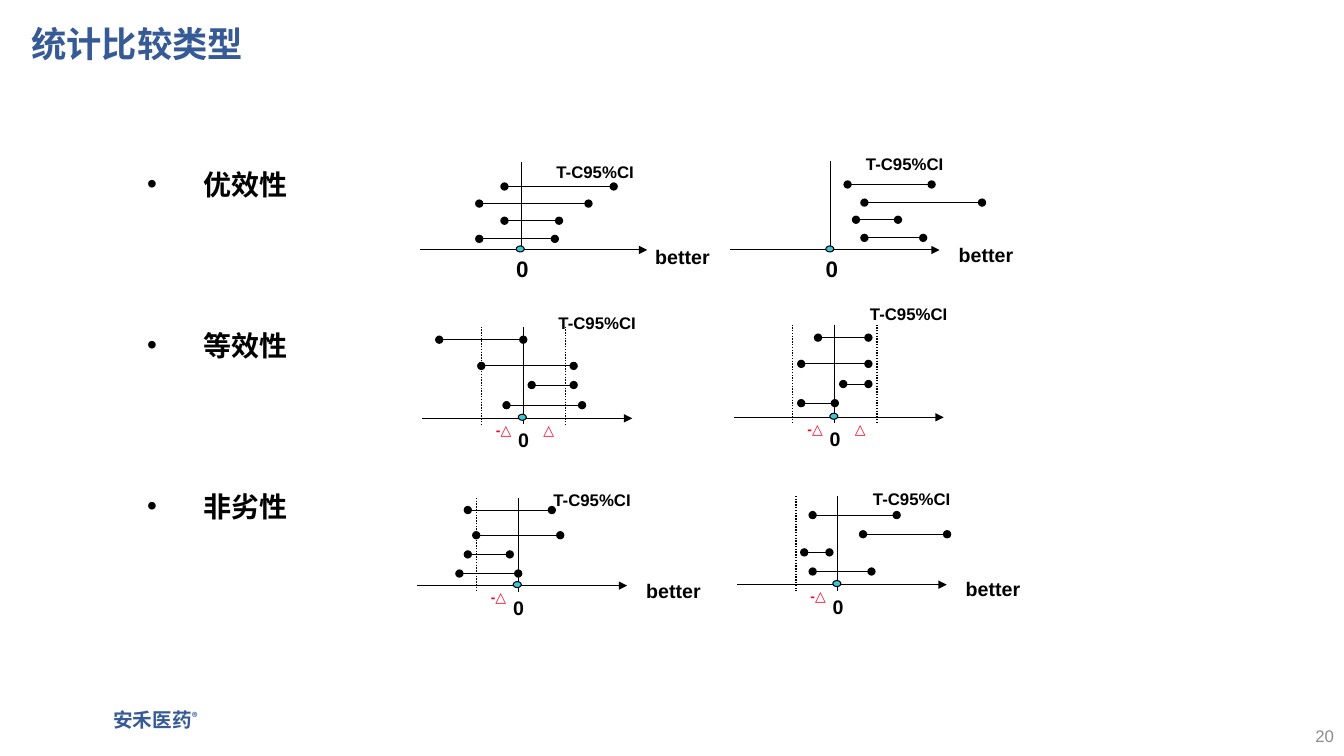
"""Build a slide of confidence interval sketches for three types of statistical comparison."""
import pptx
import pptx.dml.color
import pptx.enum.dml
import pptx.enum.shapes
import pptx.enum.text
import pptx.oxml.ns
import pptx.util
from lxml import etree

Inches, Pt = pptx.util.Inches, pptx.util.Pt
ALIGN = pptx.enum.text.PP_ALIGN
ANCHOR = pptx.enum.text.MSO_ANCHOR

TITLE = "统计比较类型"
COMPARISONS = ["优效性", "等效性", "非劣性"]
BRAND = ("安禾医药", "®")
PAGE = "20"
CJK = "Noto Sans CJK SC"
BLUE, BLACK, RED, TEAL, GRAY = "365A96", "000000", "FC0128", "3AC8D9", "8C8C8C"

UNIT = 1 / 12
MARGIN = 5 * UNIT

# Each interval is (lower, upper, height): bounds in units, height in inches above the axis.
PLOTS = [
    {"origin": (5.17, 2.48), "top": 1.61, "reach": 1.25, "caption": 1.56, "better": (1.23, -0.10),
     "margins": [], "intervals": [(-2, 11, 0.63), (-5, 8, 0.46), (-2, 4.5, 0.29), (-5, 4, 0.11)]},
    {"origin": (8.24, 2.48), "top": 1.60, "reach": 1.08, "caption": 1.48, "better": (1.17, -0.12),
     "margins": [], "intervals": [(2, 12, 0.65), (4, 18, 0.47), (3, 8, 0.30), (4, 11, 0.12)]},
    {"origin": (5.19, 4.15), "top": 3.24, "reach": 1.08, "caption": 3.05, "better": None,
     "margins": ["-△", "△"], "intervals": [(-10, 0, 0.78), (-5, 6, 0.52), (1, 6, 0.33), (-2, 7, 0.13)]},
    {"origin": (8.28, 4.14), "top": 3.22, "reach": 1.08, "caption": 2.96, "better": None,
     "margins": ["-△", "△"], "intervals": [(-2, 4, 0.79), (-4, 4, 0.53), (1, 4, 0.33), (-4, 0, 0.14)]},
    {"origin": (5.14, 5.81), "top": 4.94, "reach": 1.08, "caption": 4.81, "better": (1.17, -0.12),
     "margins": ["-△"], "intervals": [(-6, 4, 0.75), (-5, 5, 0.50), (-6, -1, 0.31), (-7, 0, 0.12)]},
    {"origin": (8.31, 5.80), "top": 4.92, "reach": 1.08, "caption": 4.80, "better": (1.17, -0.13),
     "margins": ["-△"], "intervals": [(-3, 7, 0.69), (3, 13, 0.50), (-4, -1, 0.32), (-3, 4, 0.13)]},
]


def color(hex_value):
    return pptx.dml.color.RGBColor.from_string(hex_value)


def style(paragraph, size, hex_value, font="Arial", bold=True, east_asian=None):
    for run in paragraph.runs:
        run.font.size = Pt(size)
        run.font.bold = bold
        run.font.name = font
        run.font.color.rgb = color(hex_value)
        if east_asian:
            properties = run.font._element
            etree.SubElement(properties, pptx.oxml.ns.qn("a:ea"), typeface=east_asian)


def place(shape, left, top, width, height):
    shape.left, shape.top = Inches(left), Inches(top)
    shape.width, shape.height = Inches(width), Inches(height)


def add_text(shapes, text, box, size, hex_value=BLACK, bold=True, wrap=True):
    shape = shapes.add_textbox(*map(Inches, box))
    shape.text_frame.word_wrap = wrap
    shape.text_frame.text = text
    style(shape.text_frame.paragraphs[0], size, hex_value, bold=bold)
    return shape


def add_line(shapes, start, end, width=0.75, head=None, tail=None, dotted=False):
    connector = shapes.add_connector(pptx.enum.shapes.MSO_CONNECTOR.STRAIGHT, *map(Inches, start + end))
    connector.line.color.rgb = color(BLACK)
    connector.line.width = Pt(width)
    if dotted:
        connector.line.dash_style = pptx.enum.dml.MSO_LINE.ROUND_DOT
    line = connector.line._get_or_add_ln()
    for tag, kind in (("a:headEnd", head), ("a:tailEnd", tail)):
        if kind:
            etree.SubElement(line, pptx.oxml.ns.qn(tag), type=kind)
    etree.SubElement(connector._element.spPr, pptx.oxml.ns.qn("a:effectLst"))


def add_plot(slide, plot):
    shapes = slide.shapes.add_group_shape().shapes
    x, y = plot["origin"]
    top, margins = plot["top"], plot["margins"]
    bottom = y + 0.06 if margins else y
    add_line(shapes, (x, top), (x, bottom))
    add_line(shapes, (x - 1, y), (x + plot["reach"], y), tail="triangle")
    for lower, upper, height in plot["intervals"]:
        add_line(shapes, (x + lower * UNIT, y - height), (x + upper * UNIT, y - height),
                 head="oval", tail="oval")
    for label, side, offset in zip(margins, (-1, 1), (-0.37, 0.1)):
        edge = x + side * MARGIN
        add_line(shapes, (edge, top), (edge, bottom), width=1, dotted=True)
        add_text(shapes, label, (x + offset, y - 0.02, 0.5, 0.27), 10, RED)
    dot = shapes.add_shape(pptx.enum.shapes.MSO_SHAPE.OVAL,
                           *map(Inches, (x - 0.05, y - 0.04, 0.08, 0.06)))
    dot.shadow.inherit = False
    dot.fill.solid()
    dot.fill.fore_color.rgb = color(TEAL)
    dot.line.color.rgb = color(BLACK)
    dot.line.width = Pt(0.75)
    add_text(shapes, "T-C95%CI", (x + 0.25, plot["caption"], 1.08, 0.3), 12, wrap=False)
    zero_top, zero_size = (y + 0.05, 14) if margins else (y, 16)
    add_text(shapes, "0", (x - 0.15, zero_top, 0.42, 0.35), zero_size)
    if plot["better"]:
        right, down = plot["better"]
        add_text(shapes, "better", (x + right, y + down, 0.75, 0.34), 14, wrap=False)


def add_title(slide):
    title = slide.shapes.title
    place(title, 0.21, 0.22, 11.5, 0.48)
    frame = title.text_frame
    frame.text = TITLE
    frame.vertical_anchor = ANCHOR.MIDDLE
    frame.auto_size = pptx.enum.text.MSO_AUTO_SIZE.NONE
    paragraph = frame.paragraphs[0]
    paragraph.alignment = ALIGN.LEFT
    paragraph.line_spacing = 0.9
    style(paragraph, 25.2, BLUE, "Montserrat", east_asian=CJK)


def add_comparisons(slide):
    body = slide.placeholders[1]
    place(body, 1.36, 1.61, 2.32, 4.14)
    frame = body.text_frame
    frame.text = "\n".join(COMPARISONS)
    frame.auto_size = pptx.enum.text.MSO_AUTO_SIZE.NONE
    for index, paragraph in enumerate(frame.paragraphs):
        properties = paragraph._p.get_or_add_pPr()
        properties.set("marL", str(Inches(0.56)))
        properties.set("indent", str(-Inches(0.56)))
        etree.SubElement(properties, pptx.oxml.ns.qn("a:buFont"), typeface="Arial")
        etree.SubElement(properties, pptx.oxml.ns.qn("a:buChar"), char="•")
        paragraph.space_before = Pt(91 if index else 0)
        style(paragraph, 20, BLACK, CJK, east_asian=CJK)


def add_footer(slide):
    name, mark = BRAND
    brand = add_text(slide.shapes, name, (0.53, 6.92, 1.53, 0.44), 14)
    brand.text_frame.vertical_anchor = ANCHOR.MIDDLE
    paragraph = brand.text_frame.paragraphs[0]
    paragraph.alignment = ALIGN.RIGHT
    registered = paragraph.add_run()
    registered.text = mark
    style(paragraph, 14, BLUE, CJK, east_asian=CJK)
    registered.font._element.set("baseline", "30000")
    page = add_text(slide.shapes, PAGE, (10.33, 7.1, 3, 0.4), 12, GRAY, bold=False)
    page.text_frame.vertical_anchor = ANCHOR.MIDDLE
    page.text_frame.paragraphs[0].alignment = ALIGN.RIGHT


def main():
    presentation = pptx.Presentation()
    presentation.slide_width, presentation.slide_height = Inches(13.33), Inches(7.5)
    slide = presentation.slides.add_slide(presentation.slide_layouts[1])
    add_title(slide)
    add_comparisons(slide)
    for plot in PLOTS:
        add_plot(slide, plot)
    add_footer(slide)
    presentation.save("out.pptx")


if __name__ == "__main__":
    main()
